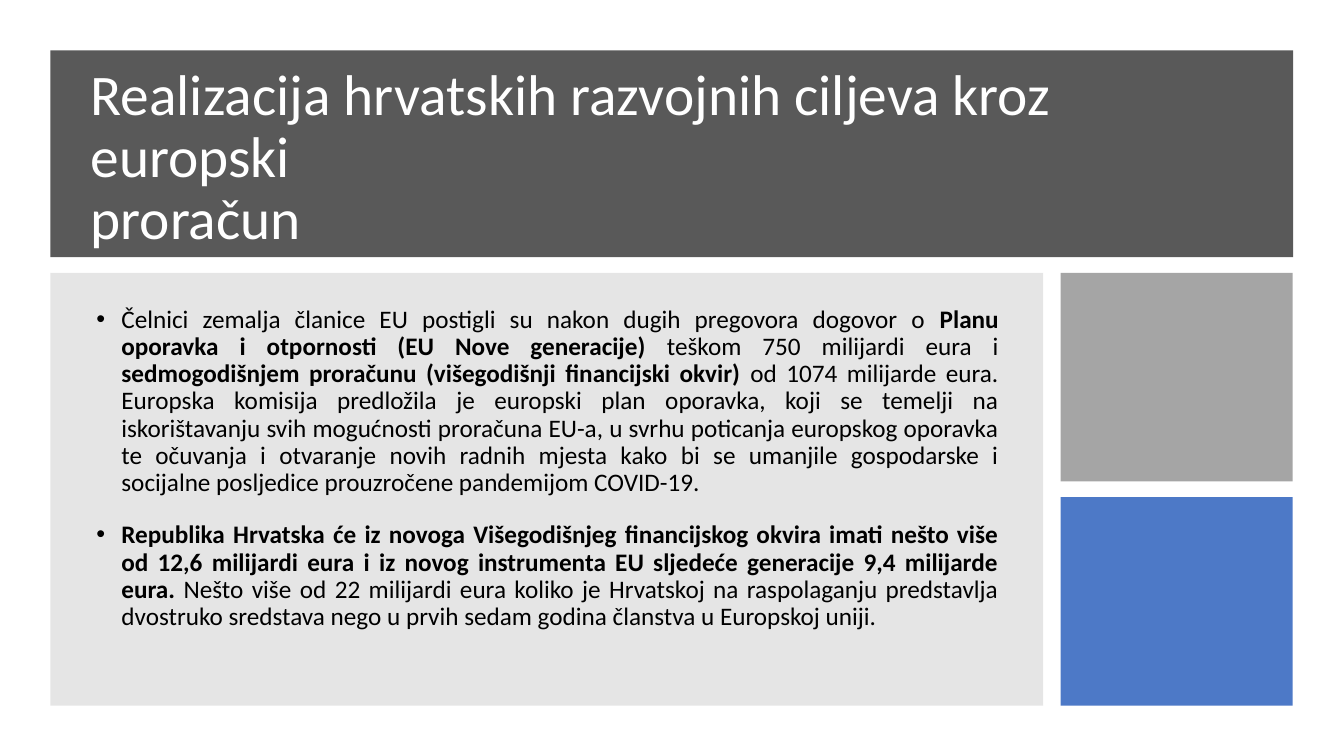
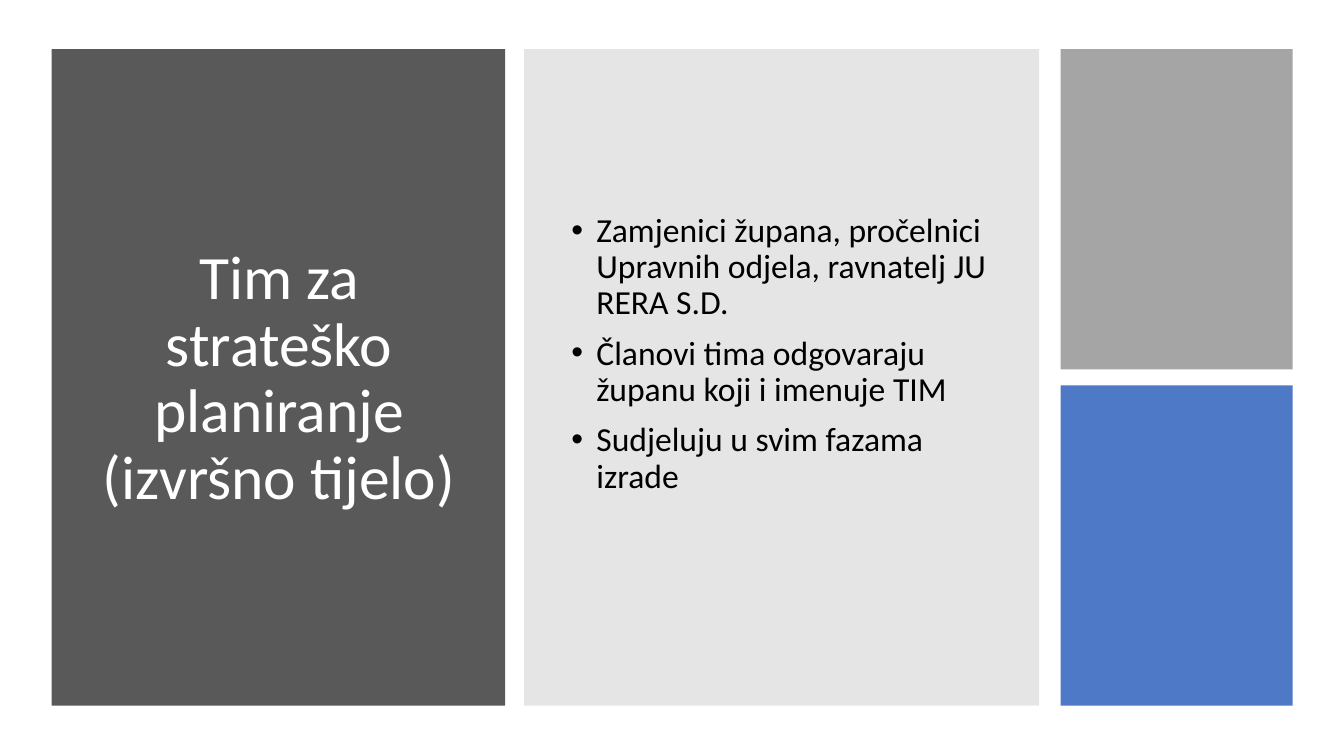
"""Build two slides on the European budget and the planning team."""
from pptx import Presentation
from pptx.dml.color import RGBColor
from pptx.enum.shapes import MSO_SHAPE
from pptx.enum.text import MSO_ANCHOR, MSO_AUTO_SIZE, PP_ALIGN
from pptx.oxml.ns import qn
from pptx.util import Cm, Pt
from lxml.etree import SubElement

DARK = RGBColor(0x59, 0x59, 0x59)
PALE = RGBColor(0x80, 0x80, 0x80)
GREY = RGBColor(0xA5, 0xA5, 0xA5)
BLUE = RGBColor(0x44, 0x72, 0xC4)
WHITE = RGBColor(0xFF, 0xFF, 0xFF)
BLACK = RGBColor(0, 0, 0)
FONT = "Calibri"
BASE = 17.78
SIDE, WIDE, GAP = 26.73, 5.85, 0.4

BUDGET = [
    [("Čelnici zemalja članice EU postigli su nakon dugih pregovora dogovor o ", False),
     ("Planu oporavka i otpornosti (EU Nove generacije) ", True),
     ("teškom 750 milijardi eura i ", False),
     ("sedmogodišnjem proračunu (višegodišnji financijski okvir)", True),
     (" od 1074 milijarde eura. Europska komisija predložila je europski plan "
      "oporavka, koji se temelji na iskorištavanju svih mogućnosti proračuna EU-a, "
      "u svrhu poticanja europskog oporavka te očuvanja i otvaranje novih radnih "
      "mjesta kako bi se umanjile gospodarske i socijalne posljedice prouzročene "
      "pandemijom COVID-19.", False)],
    [("Republika Hrvatska će iz novoga Višegodišnjeg financijskog okvira imati "
      "nešto više od 12,6 milijardi eura i iz novog instrumenta EU sljedeće "
      "generacije 9,4 milijarde eura. ", True),
     ("Nešto više od 22 milijardi eura koliko je Hrvatskoj na raspolaganju "
      "predstavlja dvostruko sredstava nego u prvih sedam godina članstva u "
      "Europskoj uniji.", False)],
]
TEAM = [
    [("Zamjenici župana, pročelnici Upravnih odjela, ravnatelj JU RERA S.D.", False)],
    [("Članovi tima odgovaraju županu koji i imenuje TIM", False)],
    [("Sudjeluju u svim fazama izrade", False)],
]


def style(item, **form):
    """Set each format value on the item."""
    for name, value in form.items():
        setattr(item, name, value)


def place(shape, area):
    """Move and size a shape to an area in centimetres."""
    style(shape, **dict(zip(("left", "top", "width", "height"), map(Cm, area))))


def block(slide, area, fill, alpha=100):
    """Draw a plain filled rectangle."""
    shape = slide.shapes.add_shape(MSO_SHAPE.RECTANGLE, *map(Cm, area))
    shape.shadow.inherit = False
    shape.line.fill.background()
    shape.fill.solid()
    shape.fill.fore_color.rgb = fill
    if alpha < 100:
        color = shape.element.spPr.find(".//" + qn("a:srgbClr"))
        SubElement(color, qn("a:alpha"), val=str(alpha * 1000))


def ink(font, size, color, bold=False):
    """Format a font."""
    style(font, name=FONT, size=Pt(size), bold=bold)
    font.color.rgb = color


def setup(frame):
    """Wrap a text frame and centre it vertically."""
    style(frame, word_wrap=True, auto_size=MSO_AUTO_SIZE.NONE,
          vertical_anchor=MSO_ANCHOR.MIDDLE)


def head(slide, area, text, size, align):
    """Format the title and lift it above the blocks."""
    title = slide.shapes.title
    place(title, area)
    setup(title.text_frame)
    para = title.text_frame.paragraphs[0]
    para.text = text
    style(para, alignment=align, line_spacing=0.9, space_before=Pt(0))
    for run in para.runs:
        ink(run.font, size, WHITE)
    title.element.getparent().append(title.element)


def points(slide, area, items, size, align, after=0):
    """Add a bulleted text box."""
    frame = slide.shapes.add_textbox(*map(Cm, area)).text_frame
    setup(frame)
    for index, item in enumerate(items):
        para = frame.add_paragraph() if index else frame.paragraphs[0]
        style(para, alignment=align, line_spacing=0.9,
              space_before=Pt(10), space_after=Pt(after))
        props = para._p.get_or_add_pPr()
        props.set("marL", str(Cm(0.63)))
        props.set("indent", str(-Cm(0.63)))
        SubElement(props, qn("a:buFont"), typeface="Arial")
        SubElement(props, qn("a:buChar"), char="•")
        for text, bold in item:
            run = para.add_run()
            run.text = text
            ink(run.font, size, BLACK, bold)


def start(deck, band, panel):
    """Add a slide with a dark band, a pale panel and two side tiles."""
    slide = deck.slides.add_slide(deck.slide_layouts[5])
    top = panel[1]
    tall = (BASE - top - GAP) / 2
    block(slide, band, DARK)
    block(slide, (*panel, BASE - top), PALE, 20)
    block(slide, (SIDE, top, WIDE, tall), GREY)
    block(slide, (SIDE, top + tall + GAP, WIDE, tall), BLUE, 95)
    return slide


def main():
    """Build and save the deck."""
    deck = Presentation()
    style(deck, slide_width=Cm(33.87), slide_height=Cm(19.05))

    slide = start(deck, (1.27, 1.27, 31.32, 5.21), (1.27, 6.88, 25.02))
    head(slide, (2.03, 2.03, 29.62, 3.96),
         "Realizacija hrvatskih razvojnih ciljeva kroz europski\vproračun",
         41, PP_ALIGN.LEFT)
    points(slide, (2.18, 7.24, 23.24, 9.14), BUDGET, 18, PP_ALIGN.JUSTIFY, 8)

    slide = start(deck, (1.3, 1.24, 11.43, 16.54), (13.21, 1.24, 12.98))
    head(slide, (2.16, 2.11, 9.75, 14.91),
         "Tim za strateško planiranje (izvršno tijelo)", 44, PP_ALIGN.CENTER)
    points(slide, (14.15, 2.11, 11.23, 13.64), TEAM, 24, PP_ALIGN.LEFT)
    deck.save("out.pptx")


if __name__ == "__main__":
    main()
